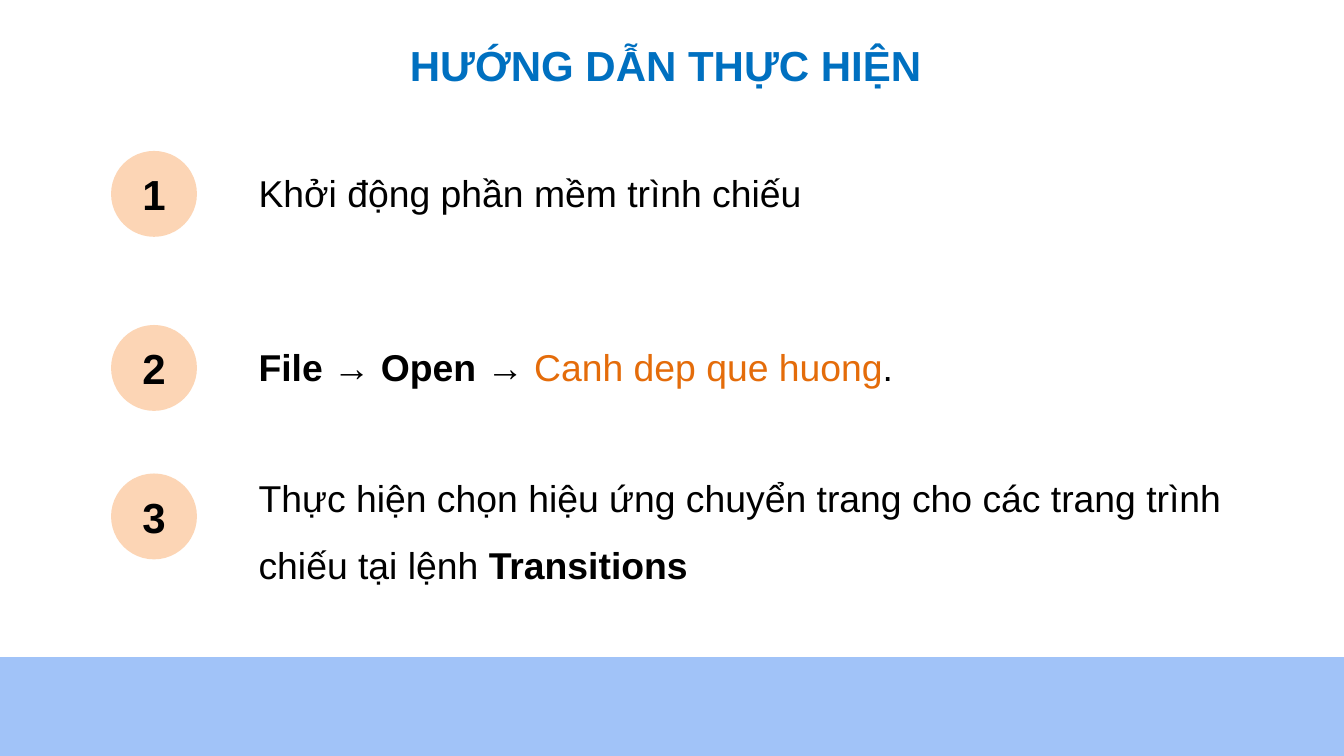
from dataclasses import dataclass

from pptx import Presentation
from pptx.dml.color import RGBColor
from pptx.enum.shapes import MSO_SHAPE
from pptx.enum.text import MSO_ANCHOR, PP_ALIGN
from pptx.util import Inches, Pt

RECTANGLE, OVAL = MSO_SHAPE.RECTANGLE, MSO_SHAPE.OVAL
LEFT, CENTER = PP_ALIGN.LEFT, PP_ALIGN.CENTER
TOP, MIDDLE = MSO_ANCHOR.TOP, MSO_ANCHOR.MIDDLE

WIDTH, HEIGHT = 20, 11.25
BADGE_LEFT, BADGE_SIZE = WIDTH / 12, WIDTH / 16
TEXT_LEFT = WIDTH * 3 / 16
FONT = "Arial"
BLACK, BLUE, ORANGE = "000000", "0070C0", "E46C0A"
PEACH, BAND_BLUE = "FCD5B5", "A1C3F8"


@dataclass(frozen=True)
class Piece:
    """A stretch of text with its own weight and colour."""

    text: str
    bold: bool = False
    color: str = BLACK


@dataclass(frozen=True)
class Step:
    """A numbered instruction and where its badge and text stand."""

    badge_top: float
    text_top: float
    text_width: float
    text_height: float
    pieces: tuple[Piece, ...]
    line_spacing: float = 1.0


STEPS = (
    Step(2.26, 2.49, 12.03, 0.77, (Piece("Khởi động phần mềm trình chiếu"),)),
    Step(4.85, 5.08, 12.03, 0.77, (
        Piece("File", bold=True),
        Piece(" → "),
        Piece("Open", bold=True),
        Piece(" → "),
        Piece("Canh dep que huong", color=ORANGE),
        Piece("."),
    )),
    Step(7.06, 6.69, 15.75, 2, (
        Piece("Thực hiện chọn hiệu ứng chuyển trang cho các trang trình chiếu tại lệnh "),
        Piece("Transitions", bold=True),
    ), line_spacing=1.5),
)


def rgb(value: str) -> RGBColor:
    """Turn a hex string into a colour."""
    return RGBColor.from_string(value)


def write_text(shape, pieces: tuple[Piece, ...], *, size: float, align=LEFT,
               anchor=TOP, line_spacing: float = 1.0) -> None:
    """Write one formatted paragraph into a shape."""
    frame = shape.text_frame
    frame.word_wrap = True
    frame.vertical_anchor = anchor
    paragraph = frame.paragraphs[0]
    paragraph.alignment = align
    paragraph.line_spacing = line_spacing
    for piece in pieces:
        run = paragraph.add_run()
        run.text = piece.text
        run.font.name = FONT
        run.font.size = Pt(size)
        run.font.bold = piece.bold
        run.font.color.rgb = rgb(piece.color)


def add_block(slide, kind, left: float, top: float, width: float, height: float,
              color: str):
    """Add a preset shape whose fill and outline share a colour."""
    shape = slide.shapes.add_shape(
        kind, Inches(left), Inches(top), Inches(width), Inches(height))
    shape.shadow.inherit = False
    shape.fill.solid()
    shape.fill.fore_color.rgb = rgb(color)
    shape.line.color.rgb = rgb(color)
    shape.line.width = Pt(2)
    return shape


def add_text(slide, left: float, top: float, width: float, height: float,
             pieces: tuple[Piece, ...], **text_format) -> None:
    """Add a text box holding one formatted paragraph."""
    box = slide.shapes.add_textbox(
        Inches(left), Inches(top), Inches(width), Inches(height))
    write_text(box, pieces, **text_format)


def add_step(slide, number: int, step: Step) -> None:
    """Draw a numbered badge and its instruction."""
    badge = add_block(slide, OVAL, BADGE_LEFT, step.badge_top,
                      BADGE_SIZE, BADGE_SIZE, PEACH)
    write_text(badge, (Piece(str(number), bold=True),), size=45,
               align=CENTER, anchor=MIDDLE)
    add_text(slide, TEXT_LEFT, step.text_top, step.text_width, step.text_height,
             step.pieces, size=40, line_spacing=step.line_spacing)


def main() -> None:
    """Build the slide and save it."""
    presentation = Presentation()
    presentation.slide_width = Inches(WIDTH)
    presentation.slide_height = Inches(HEIGHT)
    slide = presentation.slides.add_slide(presentation.slide_layouts[6])
    add_block(slide, RECTANGLE, -0.33, 9.79, 20.67, 1.82, BAND_BLUE)
    add_text(slide, 5.24, 0.54, 9.33, 0.86,
             (Piece("HƯỚNG DẪN THỰC HIỆN", bold=True, color=BLUE),),
             size=45, align=CENTER)
    for number, step in enumerate(STEPS, start=1):
        add_step(slide, number, step)
    presentation.save("out.pptx")


if __name__ == "__main__":
    main()
